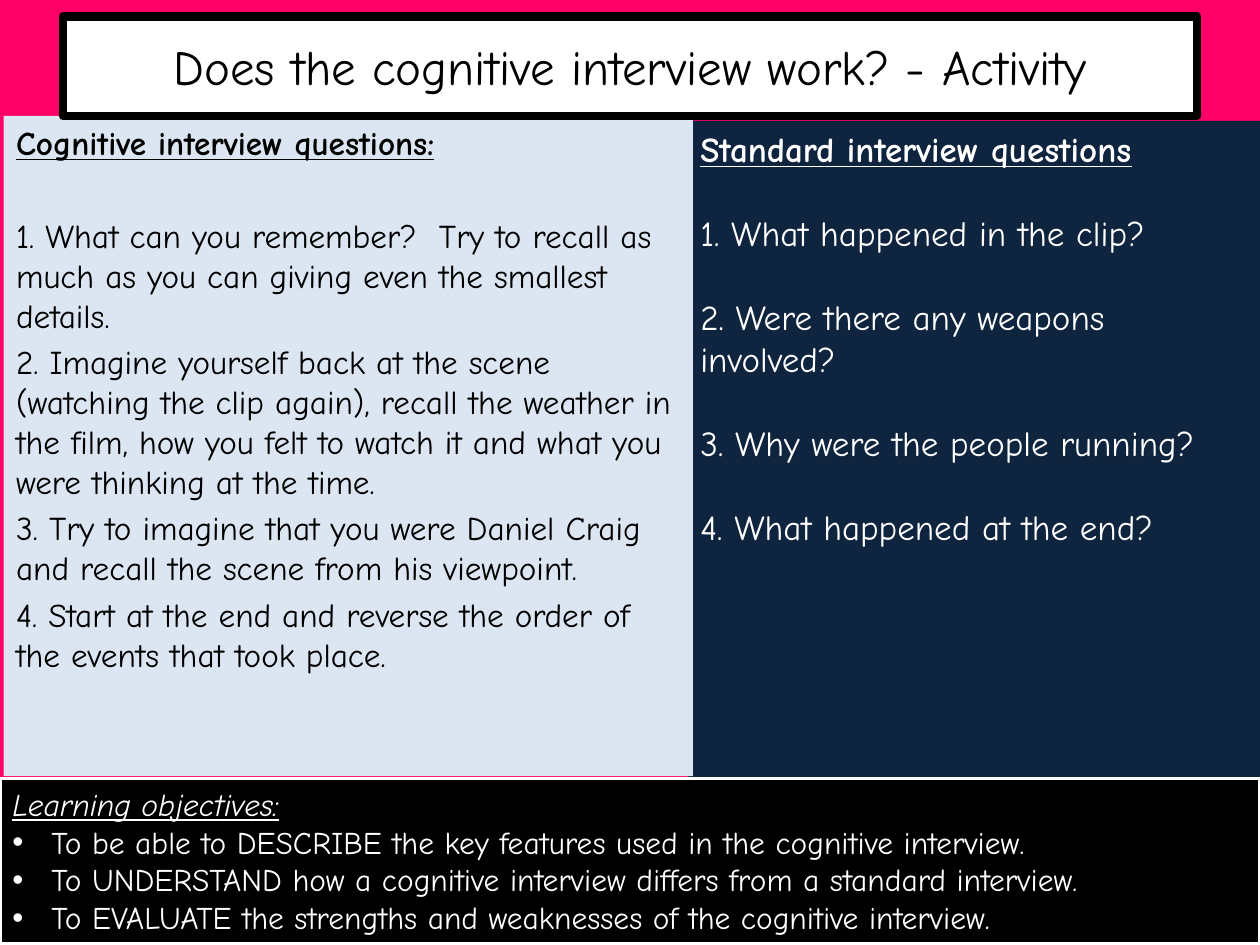
from dataclasses import dataclass

from lxml import etree
from pptx import Presentation
from pptx.dml.color import RGBColor
from pptx.enum import shapes, text
from pptx.oxml import ns
from pptx.util import Inches, Pt

FONT = "Comic Neue"
PINK = RGBColor(0xFF, 0x00, 0x66)
NAVY = RGBColor(0x0F, 0x24, 0x3E)
PALE_BLUE = RGBColor(0xDC, 0xE6, 0xF2)
BLACK = RGBColor(0, 0, 0)
WHITE = RGBColor(0xFF, 0xFF, 0xFF)


@dataclass
class Line:
    words: str
    before: float = 0  # points
    bold: bool = False
    italic: bool = False
    underline: bool = False
    bullet: bool = False


@dataclass
class Panel:
    left: float
    top: float
    width: float
    height: float
    fill: RGBColor
    ink: RGBColor
    size: int
    lines: list[Line]
    border: RGBColor | None = None
    border_width: float = 0
    centred: bool = False


def add_bullet(para) -> None:
    props = para._p.get_or_add_pPr()
    props.set("marL", str(Inches(0.31)))
    props.set("indent", str(Inches(-0.31)))
    font = etree.SubElement(props, ns.qn("a:buFont"))
    font.set("typeface", "Arial")
    etree.SubElement(props, ns.qn("a:buChar")).set("char", "•")


def add_line(para, line: Line, panel: Panel) -> None:
    para.alignment = text.PP_ALIGN.CENTER if panel.centred else text.PP_ALIGN.LEFT
    para.space_before = Pt(line.before)
    if line.bullet:
        add_bullet(para)
    span = para.add_run()
    span.text = line.words
    font = span.font
    font.name, font.size = FONT, Pt(panel.size)
    font.bold, font.italic, font.underline = line.bold, line.italic, line.underline
    font.color.rgb = panel.ink


def draw_panel(page, panel: Panel) -> None:
    box = page.shapes.add_shape(
        shapes.MSO_SHAPE.RECTANGLE, Inches(panel.left), Inches(panel.top),
        Inches(panel.width), Inches(panel.height))
    box.shadow.inherit = False
    box.fill.solid()
    box.fill.fore_color.rgb = panel.fill
    if panel.border is None:
        box.line.fill.background()
    else:
        box.line.color.rgb = panel.border
        box.line.width = Pt(panel.border_width)
    frame = box.text_frame
    frame.word_wrap = True
    frame.vertical_anchor = (text.MSO_ANCHOR.MIDDLE if panel.centred
                             else text.MSO_ANCHOR.TOP)
    for index, line in enumerate(panel.lines):
        para = frame.add_paragraph() if index else frame.paragraphs[0]
        add_line(para, line, panel)


# Right column: each question follows a gap of one line
STANDARD = Panel(5.46, 0.96, 4.54, 5.28, NAVY, WHITE, 20, [
    Line("Standard interview questions", bold=True, underline=True),
    *(Line(question, before=24) for question in (
        "1. What happened in the clip?",
        "2. Were there any weapons involved?",
        "3. Why were the people running?",
        "4. What happened at the end?")),
])

# Left column: a wide gap under the heading, then small ones
COGNITIVE = Panel(0.03, 0.92, 5.47, 5.24, PALE_BLUE, BLACK, 19, [
    Line("Cognitive interview questions:", bold=True, underline=True),
    Line("1. What can you remember?  Try to recall as much as you can giving "
         "even the smallest details.", before=30.4),
    *(Line(question, before=3.8) for question in (
        "2. Imagine yourself back at the scene (watching the clip again), recall "
        "the weather in the film, how you felt to watch it and what you were "
        "thinking at the time.",
        "3. Try to imagine that you were Daniel Craig and recall the scene from "
        "his viewpoint.",
        "4. Start at the end and reverse the order of the events that took "
        "place.")),
])

TITLE = Panel(0.5, 0.13, 9, 0.79, WHITE, BLACK, 28,
              [Line("Does the cognitive interview work? - Activity")],
              border=BLACK, border_width=5, centred=True)

OBJECTIVES = Panel(0, 6.18, 10, 1.31, BLACK, WHITE, 18, [
    Line("Learning objectives:", italic=True, underline=True),
    *(Line(goal, bullet=True) for goal in (
        "To be able to DESCRIBE the key features used in the cognitive interview.",
        "To UNDERSTAND how a cognitive interview differs from a standard interview.",
        "To EVALUATE the strengths and weaknesses of the cognitive interview.")),
], border=WHITE, border_width=2)


def main() -> None:
    deck = Presentation()
    deck.slide_width, deck.slide_height = Inches(10), Inches(7.5)
    page = deck.slides.add_slide(deck.slide_layouts[6])
    page.background.fill.solid()
    page.background.fill.fore_color.rgb = PINK
    # Back to front
    for panel in (STANDARD, COGNITIVE, TITLE, OBJECTIVES):
        draw_panel(page, panel)
    deck.save("out.pptx")


if __name__ == "__main__":
    main()
